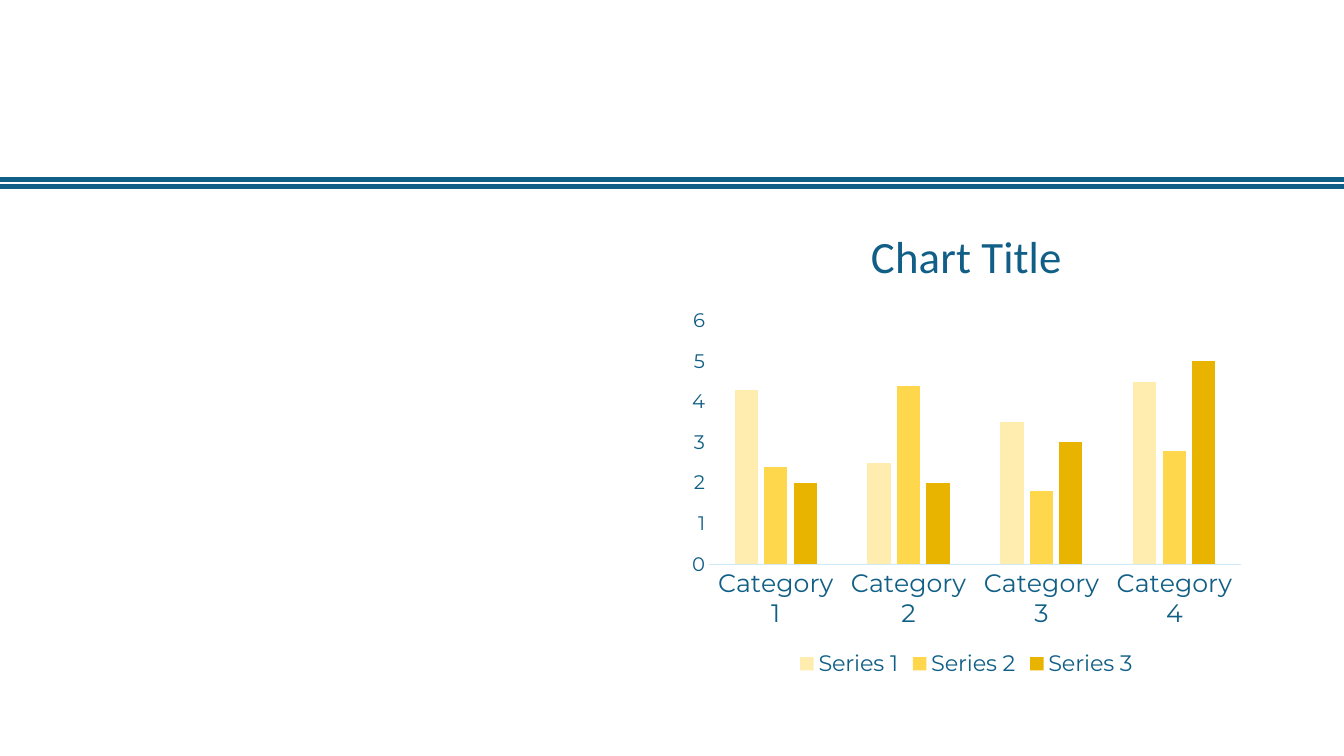
from dataclasses import dataclass

from lxml import etree
from pptx import Presentation
from pptx.chart.data import CategoryChartData
from pptx.dml.color import RGBColor
from pptx.enum import chart as charts, shapes
from pptx.oxml import ns
from pptx.util import Inches, Pt


@dataclass(frozen=True)
class Theme:
    blue: RGBColor = RGBColor.from_string("115F86")
    pale_blue: RGBColor = RGBColor.from_string("CFEBF9")
    series: tuple = ("FFEDAF", "FFD74D", "E8B400")
    title_font: str = "Calibri"
    body_font: str = "Montserrat"
    title_size: int = 32
    category_size: int = 18
    value_size: int = 14
    legend_size: int = 16
    base_size: int = 10


theme = Theme()


def style_font(font, name, size):
    font.name = name
    font.size = Pt(size)
    font.bold = False
    font.color.rgb = theme.blue


presentation = Presentation()
presentation.slide_width = Inches(13.33)
presentation.slide_height = Inches(7.5)
slide = presentation.slides.add_slide(presentation.slide_layouts[6])

# Double rule across the slide
for top in (1.85, 1.78):
    rule = slide.shapes.add_connector(
        shapes.MSO_CONNECTOR.STRAIGHT,
        Inches(0), Inches(top), Inches(13.33), Inches(top))
    rule.line.color.rgb = theme.blue
    rule.line.width = Pt(3)
    etree.SubElement(rule._element.spPr, ns.qn("a:effectLst"))

# Chart data
chart_data = CategoryChartData()
chart_data.categories = [f"Category {number}" for number in range(1, 5)]
chart_data.add_series("Series 1", (4.3, 2.5, 3.5, 4.5))
chart_data.add_series("Series 2", (2.4, 4.4, 1.8, 2.8))
chart_data.add_series("Series 3", (2, 2, 3, 5))
chart = slide.shapes.add_chart(
    charts.XL_CHART_TYPE.COLUMN_CLUSTERED,
    Inches(6.75), Inches(2), Inches(5.67), Inches(4.76), chart_data).chart
style_font(chart.font, theme.title_font, theme.base_size)

# Title
chart.has_title = True
chart.chart_title.include_in_layout = False
title_frame = chart.chart_title.text_frame
title_frame.text = "Chart Title"
style_font(title_frame.paragraphs[0].runs[0].font,
           theme.title_font, theme.title_size)

# Columns
plot = chart.plots[0]
plot.gap_width = 219
plot.overlap = -27
plot.vary_by_categories = False
for series, color in zip(plot.series, theme.series):
    series.format.fill.solid()
    series.format.fill.fore_color.rgb = RGBColor.from_string(color)

# Axes
for axis, size in ((chart.category_axis, theme.category_size),
                   (chart.value_axis, theme.value_size)):
    axis.has_major_gridlines = False
    axis.major_tick_mark = charts.XL_TICK_MARK.NONE
    axis.minor_tick_mark = charts.XL_TICK_MARK.NONE
    style_font(axis.tick_labels.font, theme.body_font, size)
chart.category_axis.format.line.color.rgb = theme.pale_blue
chart.category_axis.format.line.width = Pt(0.75)
chart.value_axis.format.line.fill.background()
chart.value_axis.minimum_scale = 0
chart.value_axis.maximum_scale = 6
chart.value_axis.major_unit = 1

# Legend
chart.has_legend = True
chart.legend.position = charts.XL_LEGEND_POSITION.BOTTOM
chart.legend.include_in_layout = False
style_font(chart.legend.font, theme.body_font, theme.legend_size)

presentation.save("out.pptx")
